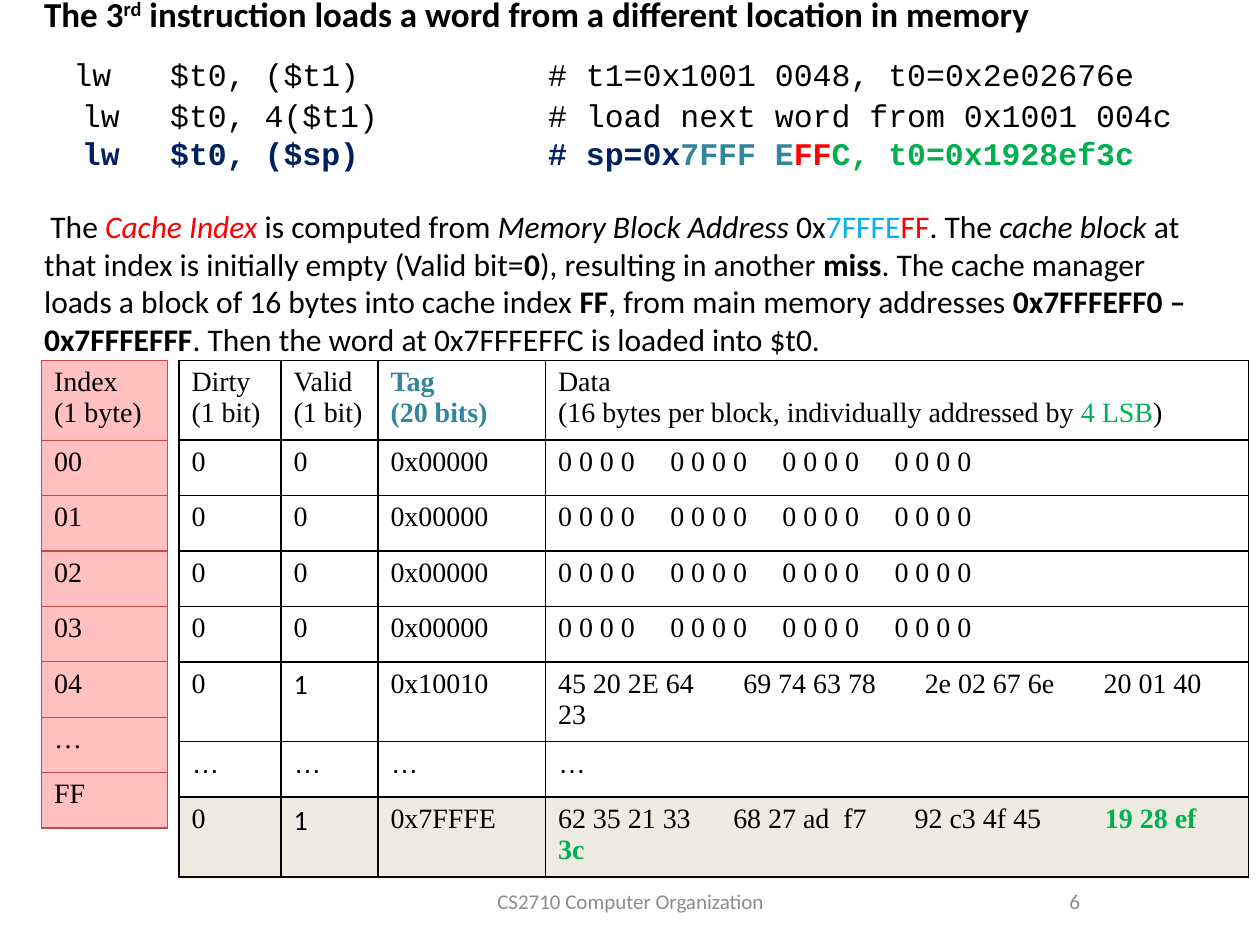
from pptx import Presentation
from pptx.dml.color import RGBColor
from pptx.enum.text import MSO_ANCHOR as Anchor, MSO_AUTO_SIZE as AutoSize, PP_ALIGN as Align
from pptx.oxml.ns import qn
from pptx.util import Inches, Pt
from lxml.etree import SubElement

BLACK, NAVY, TEAL, RED = "000000", "002060", "31859C", "FF0000"
GREEN, SKY, GREY, CREAM = "00B050", "00B0F0", "8C8C8C", "EEECE1"
PINK, ROSE = "FFC0BF", "BF4C48"
SANS, SERIF, MONO = "Calibri", "Times New Roman", "Courier New"

heading = [("The 3", {}), ("rd", {"raised": True}),
           (" instruction loads a word from a different location in memory", {})]
code_lines = [
    [(" ", {"size": 28}), ("lw\t$t0, ($t1)\t# t1=0x1001 0048, t0=0x2e02676e", {})],
    [("  lw\t$t0, 4($t1)\t# load next word from 0x1001 004c", {})],
    [("  lw\t$t0, ($sp)\t# sp=0x", {"color": NAVY, "bold": True}),
     ("7FFF E", {"color": TEAL, "bold": True}),
     ("FF", {"color": RED, "bold": True}),
     ("C, t0=0x1928ef3c", {"color": GREEN, "bold": True})],
]
explanation = [
    ("The ", {}), ("Cache Index ", {"color": RED, "italic": True}),
    ("is computed from ", {}), ("Memory Block Address", {"italic": True}),
    (" 0x", {}), ("7FFFE", {"color": SKY}), ("FF", {"color": RED}),
    (". The ", {}), ("cache block", {"italic": True}),
    (" at that index is initially empty (Valid bit=", {}), ("0", {"bold": True}),
    ("), resulting in another ", {}), ("miss", {"bold": True}),
    (". The cache manager loads a block of 16 bytes into cache index ", {}),
    ("FF", {"bold": True}), (", from main memory addresses ", {}),
    ("0x7FFFEFF0 – 0x7FFFEFFF", {"bold": True}),
    (". Then the word at 0x7FFFEFFC is loaded into $t0.", {}),
]

ELLIPSIS = [("…", {"font": "Arial"})]
VALID = [("1", {"font": SANS})]
EMPTY_BLOCK = ["0", "0", "0x00000", "\t".join(["0 0 0 0"] * 4)]
cache_rows = [
    ["Dirty\n(1 bit)", "Valid\n(1 bit)",
     [("Tag\n(20 bits)", {"color": TEAL, "bold": True})],
     [("Data\n(16 bytes per block, individually addressed by ", {}),
      ("4 LSB", {"color": GREEN}), (")", {})]],
    *[EMPTY_BLOCK] * 4,
    ["0", VALID, "0x10010", "45 20 2E 64\t69 74 63 78\t2e 02 67 6e\t20 01 40 23"],
    [ELLIPSIS] * 4,
    ["0", VALID, "0x7FFFE",
     [("62 35 21 33\t68 27 ad  f7\t92 c3 4f 45\t", {}),
      ("19 28 ef  3c", {"color": GREEN, "bold": True})]],
]
index_rows = [[label] for label in
              ("Index\n(1 byte)", "00", "01", "02", "03", "04", "…", "FF")]
ZERO_STOPS = (0.89, 1.78, 2.67)
data_stops = {1: ZERO_STOPS, 2: ZERO_STOPS, 3: ZERO_STOPS, 4: ZERO_STOPS,
              5: (1.47, 2.91, 4.33), 7: (1.39, 2.83, 4.34)}
CODE_STOPS = (1, 4)
TABLE_TOP, HEADER_HEIGHT, ROW_HEIGHT = 2.86, 0.59, 0.44


def rgb(value):
    return RGBColor.from_string(value)


def add_runs(paragraph, runs, **base):
    for text, changes in runs:
        style = {"font": SANS, "size": 18, "color": BLACK, **base, **changes}
        for number, line in enumerate(text.split("\n")):
            if number:
                paragraph.add_line_break()
            run = paragraph.add_run()
            run.text = line
            run.font.name = style["font"]
            run.font.size = Pt(style["size"])
            run.font.bold = style.get("bold", False)
            run.font.italic = style.get("italic", False)
            run.font.color.rgb = rgb(style["color"])
            if style.get("raised"):
                run.font._element.set("baseline", "30000")


def set_tabs(paragraph, stops):
    tabs = SubElement(paragraph._p.get_or_add_pPr(), qn("a:tabLst"))
    for stop in stops:
        SubElement(tabs, qn("a:tab"), pos=str(Inches(stop)), algn="l")


def add_border(cell, color, width):
    for side in ("lnL", "lnR", "lnT", "lnB"):
        line = SubElement(cell._tc.get_or_add_tcPr(), qn(f"a:{side}"), w=str(Pt(width)))
        fill = SubElement(line, qn("a:solidFill"))
        SubElement(fill, qn("a:srgbClr"), val=color)


def add_grid(slide, left, widths, rows, border, fills, stops):
    height = HEADER_HEIGHT + ROW_HEIGHT * (len(rows) - 1)
    table = slide.shapes.add_table(
        len(rows), len(widths), Inches(left), Inches(TABLE_TOP),
        Inches(sum(widths)), Inches(height)).table
    table.first_row = table.horz_banding = False
    for column, width in zip(table.columns, widths):
        column.width = Inches(width)
    for r, row in enumerate(rows):
        table.rows[r].height = Inches(ROW_HEIGHT if r else HEADER_HEIGHT)
        for c, content in enumerate(row):
            cell = table.cell(r, c)
            add_border(cell, *border)
            cell.fill.solid()
            cell.fill.fore_color.rgb = rgb(fills[r])
            paragraph = cell.text_frame.paragraphs[0]
            if c == 3 and r in stops:
                set_tabs(paragraph, stops[r])
            runs = [(content, {})] if isinstance(content, str) else content
            add_runs(paragraph, runs, font=SERIF, size=16)


def add_title(slide):
    title = slide.shapes.title
    title.left, title.top, title.width, title.height = map(Inches, (0.25, 0.67, 9.33, 2.17))
    frame = title.text_frame
    frame.word_wrap = True
    frame.auto_size = AutoSize.NONE
    frame.vertical_anchor = Anchor.MIDDLE
    frame.margin_bottom = Inches(0.75)
    parts = [(heading, 0, {"size": 20, "bold": True})]
    parts += [(line, 0 if n else 14, {"font": MONO}) for n, line in enumerate(code_lines)]
    parts += [(explanation, 20.5, {})]
    for n, (runs, before, base) in enumerate(parts):
        paragraph = frame.add_paragraph() if n else frame.paragraphs[0]
        paragraph.alignment = Align.LEFT
        paragraph.line_spacing = Pt(21.5)
        paragraph.space_before = Pt(before)
        if runs in code_lines:
            set_tabs(paragraph, CODE_STOPS)
        if runs is explanation:
            paragraph._p.get_or_add_pPr().set("indent", str(Inches(0.05)))
        add_runs(paragraph, runs, **base)


def add_footer(slide, text, left, width, alignment):
    frame = slide.shapes.add_textbox(
        Inches(left), Inches(6.95), Inches(width), Inches(0.4)).text_frame
    frame.word_wrap = True
    frame.vertical_anchor = Anchor.MIDDLE
    frame.paragraphs[0].alignment = alignment
    add_runs(frame.paragraphs[0], [(text, {})], size=12, color=GREY)


def main():
    deck = Presentation()
    deck.slide_width, deck.slide_height = Inches(10), Inches(7.5)
    slide = deck.slides.add_slide(deck.slide_layouts[5])
    add_title(slide)
    add_footer(slide, "CS2710 Computer Organization", 3.42, 3.17, Align.CENTER)
    add_footer(slide, "6", 7.17, 1.5, Align.RIGHT)
    add_grid(slide, 1.42, (0.81, 0.77, 1.33, 5.58), cache_rows, (BLACK, 1),
             ["FFFFFF"] * 7 + [CREAM], data_stops)
    add_grid(slide, 0.33, (1,), index_rows, (ROSE, 0.75), [PINK] * 8, {})
    deck.save("out.pptx")


if __name__ == "__main__":
    main()
